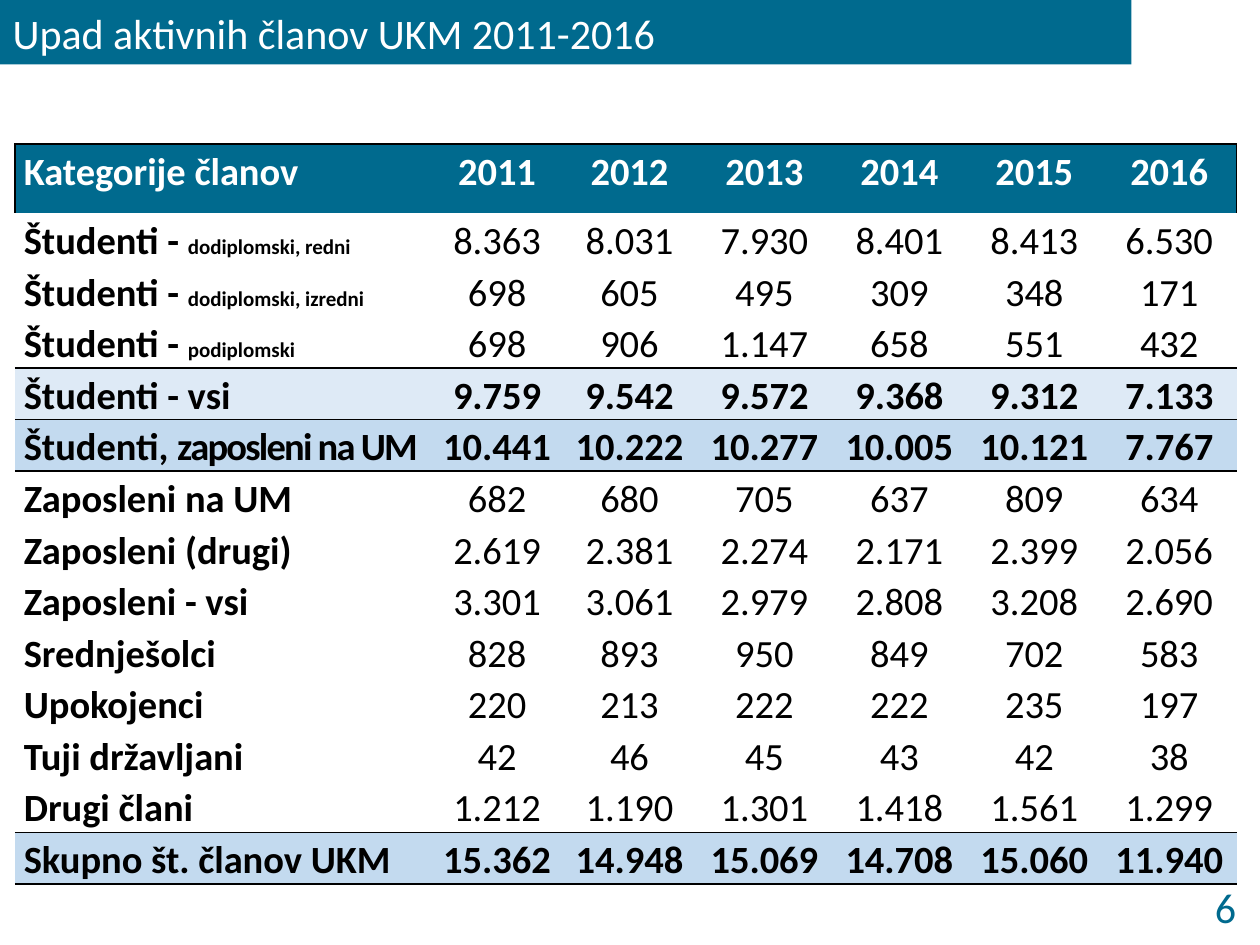
from dataclasses import dataclass

import pptx
import pptx.dml.color
import pptx.enum.text
import pptx.oxml
import pptx.oxml.ns
import pptx.util

Cm = pptx.util.Cm
Pt = pptx.util.Pt
Align = pptx.enum.text.PP_ALIGN
Anchor = pptx.enum.text.MSO_ANCHOR


@dataclass(frozen=True)
class Theme:
    font: str = "Calibri"
    accent: str = "006A8E"
    white: str = "FFFFFF"
    black: str = "000000"
    subtotal: str = "DEEAF6"
    total: str = "C3DAEF"
    title_size: int = 24
    table_size: int = 22
    detail_size: int = 12
    line_width: int = 1


HEADER = ["Kategorije članov", "2011", "2012", "2013", "2014", "2015", "2016"]
MEMBERS = [
    ("Študenti - |dodiplomski, redni", "8.363 8.031 7.930 8.401 8.413 6.530"),
    ("Študenti - |dodiplomski, izredni", "698 605 495 309 348 171"),
    ("Študenti - |podiplomski", "698 906 1.147 658 551 432"),
    ("Študenti - vsi", "9.759 9.542 9.572 9.368 9.312 7.133"),
    ("Študenti, |zaposleni na UM", "10.441 10.222 10.277 10.005 10.121 7.767"),
    ("Zaposleni na UM", "682 680 705 637 809 634"),
    ("Zaposleni (drugi)", "2.619 2.381 2.274 2.171 2.399 2.056"),
    ("Zaposleni - vsi", "3.301 3.061 2.979 2.808 3.208 2.690"),
    ("Srednješolci", "828 893 950 849 702 583"),
    ("Upokojenci", "220 213 222 222 235 197"),
    ("Tuji državljani", "42 46 45 43 42 38"),
    ("Drugi člani", "1.212 1.190 1.301 1.418 1.561 1.299"),
    ("Skupno št. članov UKM", "15.362 14.948 15.069 14.708 15.060 11.940"),
]
COLUMN_WIDTHS = [8.41, 2.62] + [2.72] * 5
ROW_HEIGHTS = [1.4] + [1.04] * len(MEMBERS)
SUBTOTAL_ROW = 4
STAFF_TOTAL_ROW = 5
GRAND_TOTAL_ROW = 13
SUMMARY_ROWS = {SUBTOTAL_ROW, STAFF_TOTAL_ROW, GRAND_TOTAL_ROW}
RULES = {0} | SUMMARY_ROWS | {row + 1 for row in SUMMARY_ROWS}


class SlideBuilder:
    def __init__(self, presentation, theme):
        self.theme = theme
        self.slide = presentation.slides.add_slide(presentation.slide_layouts[5])

    def color(self, value):
        return pptx.dml.color.RGBColor.from_string(value)

    def format(self, paragraph, size, color, bold=False, align=Align.LEFT):
        paragraph.alignment = align
        font = paragraph.font
        font.name = self.theme.font
        font.size = Pt(size)
        font.bold = bold
        font.color.rgb = self.color(color)

    def title(self, text, left, top, width, height):
        shape = self.slide.shapes.title
        shape.left, shape.top = Cm(left), Cm(top)
        shape.width, shape.height = Cm(width), Cm(height)
        shape.fill.solid()
        shape.fill.fore_color.rgb = self.color(self.theme.accent)
        frame = shape.text_frame
        frame.text = text
        frame.auto_size = pptx.enum.text.MSO_AUTO_SIZE.NONE
        frame.vertical_anchor = Anchor.MIDDLE
        self.format(frame.paragraphs[0], self.theme.title_size, self.theme.white)

    def page_number(self, text, left, top, width, height):
        shape = self.slide.shapes.add_textbox(Cm(left), Cm(top), Cm(width), Cm(height))
        frame = shape.text_frame
        frame.word_wrap = True
        frame.vertical_anchor = Anchor.MIDDLE
        frame.text = text
        self.format(frame.paragraphs[0], self.theme.title_size, self.theme.accent,
                    align=Align.RIGHT)

    def borders(self, cell, visible):
        properties = cell._tc.get_or_add_tcPr()
        for side in "LRTB":
            if side in visible:
                paint = f'<a:solidFill><a:srgbClr val="{self.theme.black}"/></a:solidFill>'
            else:
                paint = "<a:noFill/>"
            properties.append(pptx.oxml.parse_xml(
                f'<a:ln{side} {pptx.oxml.ns.nsdecls("a")} '
                f'w="{Pt(self.theme.line_width)}">{paint}</a:ln{side}>'))

    def cell(self, cell, text, color, bold, align, fill, visible):
        cell.margin_left = cell.margin_right = Cm(0.18)
        cell.margin_top = cell.margin_bottom = 0
        self.borders(cell, visible)
        if fill:
            cell.fill.solid()
            cell.fill.fore_color.rgb = self.color(fill)
        else:
            cell.fill.background()
        paragraph = cell.text_frame.paragraphs[0]
        paragraph.line_spacing = 1.1
        self.format(paragraph, self.theme.table_size, color, bold, align)
        label, _, detail = text.partition("|")
        paragraph.add_run().text = label
        if detail:
            run = paragraph.add_run()
            run.text = detail
            if label.endswith("- "):
                run.font.size = Pt(self.theme.detail_size)
            else:
                run._r.get_or_add_rPr().set("spc", "-100")

    def table(self, rows, left, top):
        table = self.slide.shapes.add_table(
            len(rows), len(COLUMN_WIDTHS), Cm(left), Cm(top),
            Cm(sum(COLUMN_WIDTHS)), Cm(sum(ROW_HEIGHTS))).table
        table.horz_banding = False
        for column, width in zip(table.columns, COLUMN_WIDTHS):
            column.width = Cm(width)
        for row, height in zip(table.rows, ROW_HEIGHTS):
            row.height = Cm(height)
        fills = {0: self.theme.accent, SUBTOTAL_ROW: self.theme.subtotal,
                 STAFF_TOTAL_ROW: self.theme.total, GRAND_TOTAL_ROW: self.theme.total}
        last = len(COLUMN_WIDTHS) - 1
        for r, values in enumerate(rows):
            color = self.theme.black if r else self.theme.white
            for c, text in enumerate(values):
                visible = set()
                if r in RULES:
                    visible.add("T")
                if r + 1 in RULES:
                    visible.add("B")
                if r == 0 and c == 0:
                    visible.add("L")
                if r == 0 and c == last:
                    visible.add("R")
                self.cell(table.cell(r, c), text, color, c == 0 or r in fills,
                          Align.CENTER if c else Align.LEFT, fills.get(r), visible)


def main():
    presentation = pptx.Presentation()
    presentation.slide_width = Cm(25.4)
    presentation.slide_height = Cm(19.05)
    builder = SlideBuilder(presentation, Theme())
    builder.page_number("6", 22.68, 17.73, 2.49, 1.09)
    builder.title("Upad aktivnih članov UKM 2011-2016", 0, 0, 22.81, 1.3)
    builder.table([HEADER] + [[label, *counts.split()] for label, counts in MEMBERS],
                  0.3, 2.9)
    presentation.save("out.pptx")


if __name__ == "__main__":
    main()
